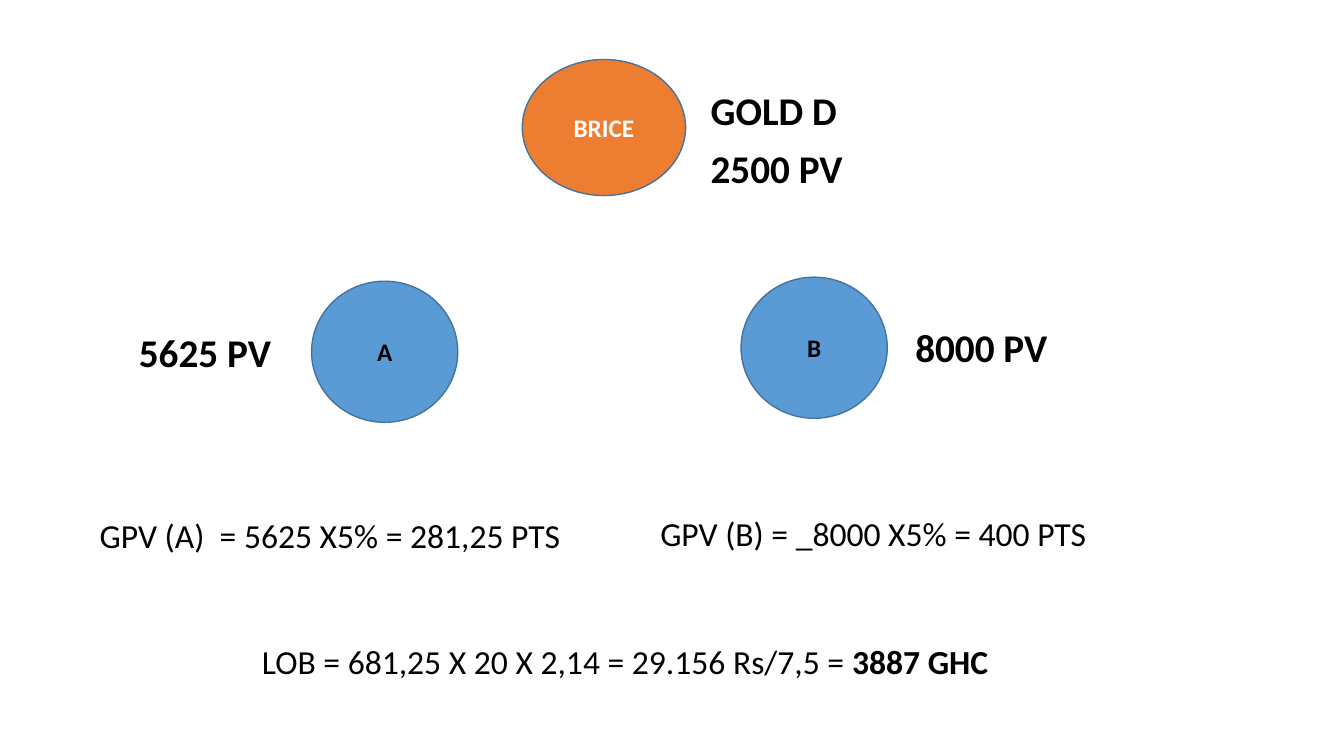
from pptx import Presentation
from pptx.dml.color import RGBColor
from pptx.enum import shapes, text
from pptx.util import Inches, Pt


def rgb(value):
    return RGBColor.from_string(value)


class Board:
    font = "Calibri"
    ink = "000000"
    outline = "43739E"

    def __init__(self, slide):
        self.s = slide

    def add_runs(self, p, runs, size, color):
        """Fill a paragraph with (wording, bold) runs."""
        for wording, bold in runs:
            r = p.add_run()
            r.text = wording
            r.font.name = self.font
            r.font.size = Pt(size)
            r.font.bold = bold
            r.font.color.rgb = rgb(color)

    def member(self, name, left, top, width, height, fill, color=ink):
        sp = self.s.shapes.add_shape(
            shapes.MSO_SHAPE.OVAL,
            Inches(left), Inches(top), Inches(width), Inches(height))
        sp.shadow.inherit = False
        sp.fill.solid()
        sp.fill.fore_color.rgb = rgb(fill)
        sp.line.color.rgb = rgb(self.outline)
        sp.line.width = Pt(1)
        tf = sp.text_frame
        tf.vertical_anchor = text.MSO_ANCHOR.MIDDLE
        p = tf.paragraphs[0]
        p.alignment = text.PP_ALIGN.CENTER
        self.add_runs(p, [(name, True)], 18, color)

    def label(self, runs, left, top, width, height, size):
        sp = self.s.shapes.add_textbox(
            Inches(left), Inches(top), Inches(width), Inches(height))
        tf = sp.text_frame
        tf.word_wrap = True
        tf.auto_size = text.MSO_AUTO_SIZE.SHAPE_TO_FIT_TEXT
        self.add_runs(tf.paragraphs[0], runs, size, self.ink)

    def volume(self, wording, left, top):
        self.label([(wording, True)], left, top, 2.53, 0.57, 28)

    def formula(self, wording, left, top, result=""):
        runs = [(wording, False)]
        if result:
            runs.append((result, True))
        self.label(runs, left, top, 7.91, 0.5, 24)


def main():
    prs = Presentation()
    prs.slide_width, prs.slide_height = Inches(13.33), Inches(7.5)
    board = Board(prs.slides.add_slide(prs.slide_layouts[6]))

    board.member("BRICE", 5.18, 0.59, 1.62, 1.35, "ED7D31", "FFFFFF")
    for name, left, top in (("A", 3.09, 2.79), ("B", 7.35, 2.75)):
        board.member(name, left, top, 1.45, 1.4, "5B9BD5")

    board.volume("GOLD D", 6.95, 0.81)
    board.volume("2500 PV", 6.95, 1.38)
    board.volume("5625 PV", 1.28, 3.21)
    board.volume("8000 PV", 8.98, 3.16)

    board.formula("GPV (A)  = 5625 X5% = 281,25 PTS", 0.89, 5.06)
    board.formula("GPV (B) = _8000 X5% = 400 PTS", 6.45, 5.04)
    board.formula("LOB = 681,25 X 20 X 2,14 = 29.156 Rs/7,5 = ", 2.5, 6.31,
                  "3887 GHC")

    prs.save("out.pptx")


if __name__ == "__main__":
    main()
